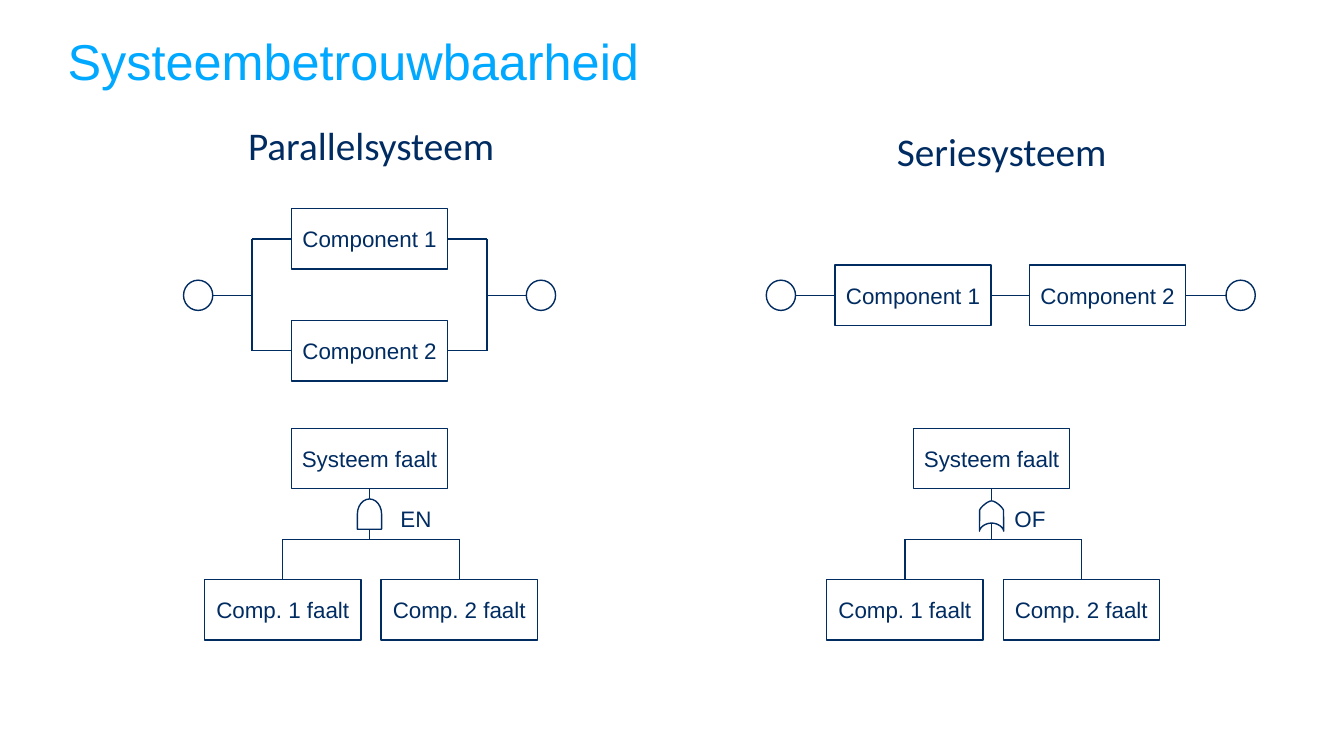
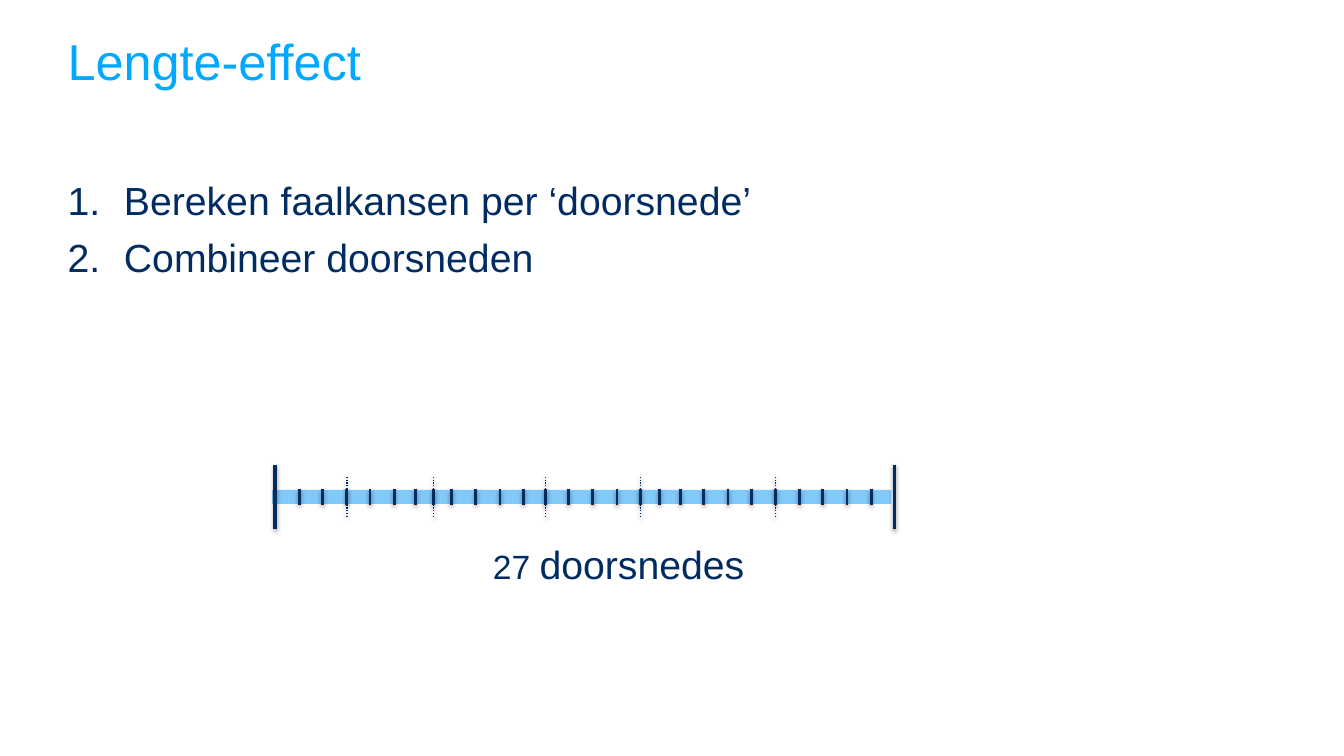
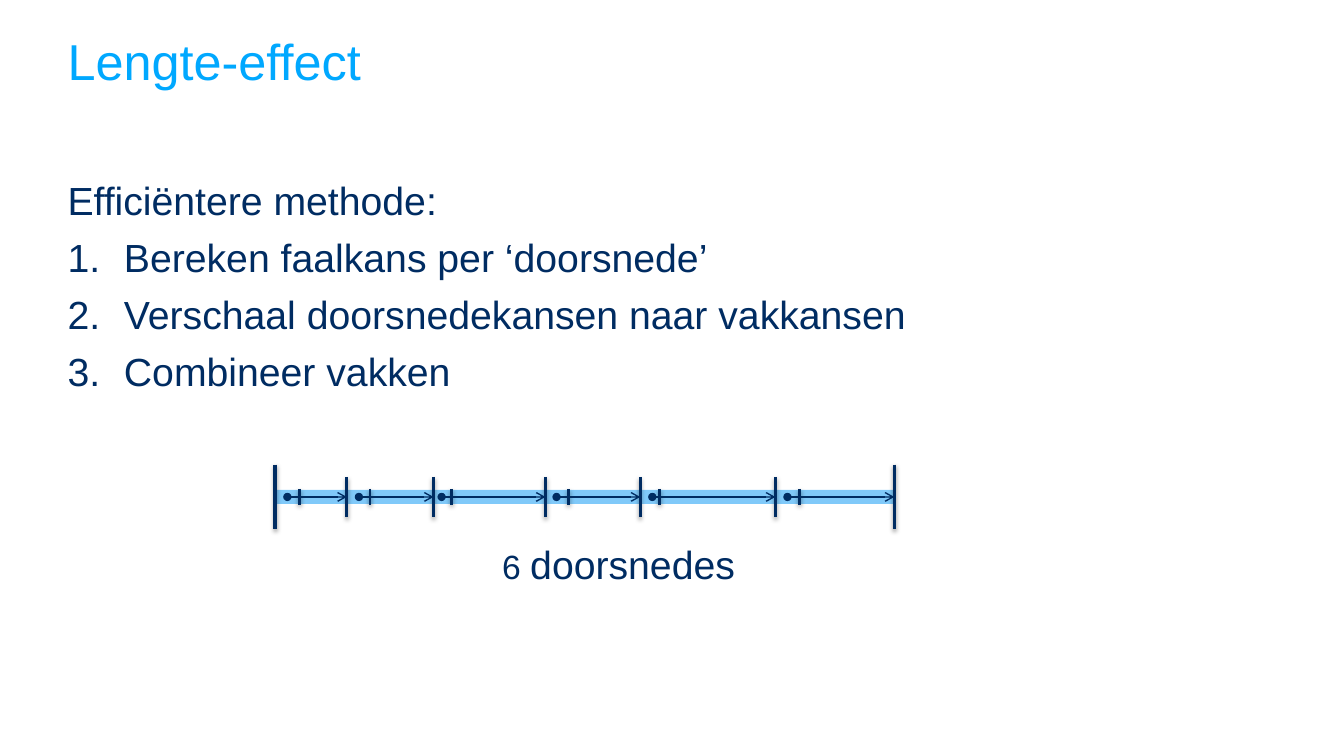
import dataclasses

import lxml.etree
import pptx
import pptx.dml.color
import pptx.enum.dml
import pptx.enum.shapes
import pptx.enum.text
import pptx.oxml.ns
import pptx.util

Inches = pptx.util.Inches
Pt = pptx.util.Pt
qn = pptx.oxml.ns.qn
Shape = pptx.enum.shapes.MSO_SHAPE
Align = pptx.enum.text.PP_ALIGN
Anchor = pptx.enum.text.MSO_ANCHOR
TOP, LEFT, BOTTOM, RIGHT = range(4)


@dataclasses.dataclass(frozen=True)
class Theme:
    title_color: str = "00A8FF"
    ink: str = "002C62"
    band: str = "0395F4"
    white: str = "FFFFFF"
    font: str = "Arial"
    heading_font: str = "Calibri"
    title_size: int = 36
    body_size: int = 28
    count_size: int = 24
    box_size: int = 16
    thin: float = 1
    tick: float = 2
    end: float = 2.5
    band_width: float = 10


@dataclasses.dataclass(frozen=True)
class Section:
    start: float
    dot: float
    ticks: tuple


THEME = Theme()
BOX_WIDTH, BOX_HEIGHT = 1.55, 0.6
CIRCLE_WIDTH, CIRCLE_HEIGHT = 0.29, 0.3
DIKE_START, DIKE_END, DIKE_Y = 2.73, 8.87, 4.93
SECTIONS = (
    Section(DIKE_START, 2.85, (2.97, 3.2)),
    Section(3.44, 3.56, (3.67, 3.91, 4.12)),
    Section(4.3, 4.38, (4.48, 4.72, 4.96, 5.19)),
    Section(5.41, 5.52, (5.64, 5.88, 6.12)),
    Section(6.35, 6.47, (6.54, 6.75, 6.98, 7.22, 7.45)),
    Section(7.69, 7.81, (7.93, 8.16, 8.4, 8.64)),
)
BOUNDARIES = [section.start for section in SECTIONS[1:]]


def rgb(value):
    return pptx.dml.color.RGBColor.from_string(value)


def style_font(font, size=None, color=THEME.ink, name=THEME.font):
    font.name = name
    font.color.rgb = rgb(color)
    if size:
        font.size = Pt(size)


def add_titled_slide(presentation, text):
    slide = presentation.slides.add_slide(presentation.slide_layouts[5])
    title = slide.shapes.title
    title.left, title.top = Inches(0.67), Inches(0.3)
    title.width, title.height = Inches(12), Inches(1.25)
    frame = title.text_frame
    frame.text = text
    remove_insets(frame)
    frame.vertical_anchor = Anchor.TOP
    frame.auto_size = pptx.enum.text.MSO_AUTO_SIZE.NONE
    paragraph = frame.paragraphs[0]
    paragraph.alignment = Align.LEFT
    style_font(paragraph.font, THEME.title_size, THEME.title_color)
    return slide


def remove_insets(frame):
    frame.margin_left = frame.margin_right = 0
    frame.margin_top = frame.margin_bottom = 0


def add_text_frame(slide, left, top, width, height):
    frame = slide.shapes.add_textbox(
        Inches(left), Inches(top), Inches(width), Inches(height)).text_frame
    frame.word_wrap = True
    return frame


def add_label(slide, text, left, top, width, height, size, name=THEME.font):
    frame = add_text_frame(slide, left, top, width, height)
    frame.vertical_anchor = Anchor.MIDDLE
    write_centred(frame, text, size, name)


def write_centred(frame, text, size, name=THEME.font):
    paragraph = frame.paragraphs[0]
    paragraph.text = text
    paragraph.alignment = Align.CENTER
    style_font(paragraph.font, size, name=name)


def add_body(slide, steps, intro=None):
    frame = add_text_frame(slide, 0.67, 1.75, 12, 4.2)
    remove_insets(frame)
    lines = ([intro] if intro else []) + steps
    for index, line in enumerate(lines):
        paragraph = frame.add_paragraph() if index else frame.paragraphs[0]
        paragraph.text = line
        if index:
            paragraph.space_before = Pt(7)
        if line != intro:
            properties = paragraph._p.get_or_add_pPr()
            properties.set("marL", str(Inches(0.56)))
            properties.set("indent", str(Inches(-0.56)))
            lxml.etree.SubElement(
                properties, qn("a:buAutoNum"), type="arabicPeriod")
        style_font(paragraph.font, THEME.body_size)


def style_outline(shape, fill=None):
    shape.shadow.inherit = False
    if fill:
        shape.fill.solid()
        shape.fill.fore_color.rgb = rgb(fill)
    else:
        shape.fill.background()
    shape.line.color.rgb = rgb(THEME.ink)
    shape.line.width = Pt(THEME.thin)


def add_outline(slide, kind, left, top, width, height, fill=None):
    shape = slide.shapes.add_shape(
        kind, Inches(left), Inches(top), Inches(width), Inches(height))
    style_outline(shape, fill)
    return shape


def add_box(slide, text, left, top):
    box = add_outline(
        slide, Shape.RECTANGLE, left, top, BOX_WIDTH, BOX_HEIGHT)
    box.text_frame.word_wrap = False
    box.text_frame.vertical_anchor = Anchor.MIDDLE
    write_centred(box.text_frame, text, THEME.box_size)
    return box


def add_terminal(slide, left, center_y):
    add_outline(slide, Shape.OVAL, left, center_y - CIRCLE_HEIGHT / 2,
                CIRCLE_WIDTH, CIRCLE_HEIGHT)


def add_line(slide, start, end, width=THEME.thin, color=THEME.ink,
             begin=None, finish=None, shadow=False):
    line = slide.shapes.add_connector(
        pptx.enum.shapes.MSO_CONNECTOR.STRAIGHT,
        *(Inches(value) for value in (*start, *end)))
    if begin:
        line.begin_connect(*begin)
    if finish:
        line.end_connect(*finish)
    line.line.color.rgb = rgb(color)
    line.line.width = Pt(width)
    effects = lxml.etree.SubElement(line._element.spPr, qn("a:effectLst"))
    if shadow:
        outer = lxml.etree.SubElement(
            effects, qn("a:outerShdw"), blurRad=str(Pt(3.1)),
            dist=str(Pt(1.6)), dir="5400000", rotWithShape="0")
        black = lxml.etree.SubElement(outer, qn("a:srgbClr"), val="000000")
        lxml.etree.SubElement(black, qn("a:alpha"), val="38000")
    return line


def add_parallel_system(slide):
    left, rails, middle = 2.89, (2.5, 4.83), 2.93
    tops = (2.07, 3.18)
    centers = [top + BOX_HEIGHT / 2 for top in tops]
    for number, (top, center) in enumerate(zip(tops, centers), 1):
        box = add_box(slide, f"Component {number}", left, top)
        sides = ((LEFT, left), (RIGHT, left + BOX_WIDTH))
        for rail, (side, edge) in zip(rails, sides):
            add_line(slide, (edge, center), (rail, center), begin=(box, side))
    for rail in rails:
        add_line(slide, (rail, centers[0]), (rail, centers[1]))
    add_line(slide, (2.11, middle), (rails[0], middle))
    add_line(slide, (rails[1], middle), (5.22, middle))
    add_terminal(slide, 1.82, middle)
    add_terminal(slide, 5.22, middle)


def add_series_system(slide):
    top = 2.63
    middle = top + BOX_HEIGHT / 2
    first = add_box(slide, "Component 1", 8.28, top)
    second = add_box(slide, "Component 2", 10.21, top)
    add_line(slide, (7.89, middle), (8.28, middle), finish=(first, LEFT))
    add_line(slide, (9.83, middle), (10.21, middle),
             begin=(first, RIGHT), finish=(second, LEFT))
    add_line(slide, (11.76, middle), (12.16, middle), begin=(second, RIGHT))
    add_terminal(slide, 7.6, middle)
    add_terminal(slide, 12.16, middle)


def add_fault_tree(slide, left, add_gate, label, label_left):
    center, bus_y, child_top = left + BOX_WIDTH / 2, 5.35, 5.75
    system = add_box(slide, "Systeem faalt", left, 4.25)
    child_centers = []
    for number, offset in enumerate((-0.86, 0.89), 1):
        child = add_box(
            slide, f"Comp. {number} faalt", left + offset, child_top)
        child_center = center + offset
        child_centers.append(child_center)
        add_line(slide, (child_center, bus_y), (child_center, child_top),
                 finish=(child, TOP))
    add_line(slide, *((x, bus_y) for x in child_centers))
    add_line(slide, (center, 4.85), (center, bus_y), begin=(system, BOTTOM))
    add_gate(slide, center)
    add_label(slide, label, label_left, 4.84, BOX_WIDTH, BOX_HEIGHT,
              THEME.box_size)


def add_and_gate(slide, center):
    gate = add_outline(slide, Shape.FLOWCHART_DELAY, center - 0.15, 4.98,
                       0.3, 0.24, THEME.white)
    gate.rotation = 270


def curve_points(*controls):
    steps = 12
    for step in range(1, steps + 1):
        t = step / steps
        weights = ((1 - t) ** 3, 3 * t * (1 - t) ** 2,
                   3 * t ** 2 * (1 - t), t ** 3)
        yield tuple(sum(weight * point[axis] for weight, point
                        in zip(weights, controls)) for axis in (0, 1))


def add_or_gate(slide, center):
    half, tip, shoulder, arch, foot = 0.12, 4.97, 5.07, 5.19, 5.27
    right_half = [
        *curve_points((0, arch), (0.07, arch), (half, 5.24), (half, foot)),
        *curve_points((half, shoulder), (half, 5.04), (0.04, tip), (0, tip)),
    ]
    left_half = [(-x, y) for x, y in reversed(right_half)]
    outline = [(Inches(center + x), Inches(y))
               for x, y in [(0, arch), *right_half, *left_half]]
    builder = slide.shapes.build_freeform(*outline[0])
    builder.add_line_segments(outline[1:], close=True)
    style_outline(builder.convert_to_shape(), THEME.white)


def add_band(slide, start, end):
    band = add_line(slide, (start, DIKE_Y), (end, DIKE_Y),
                    THEME.band_width, THEME.band)
    color = band.line._ln.find(".//" + qn("a:srgbClr"))
    lxml.etree.SubElement(color, qn("a:alpha"), val="50000")


def add_mark(slide, x, half_height, width):
    return add_line(slide, (x, DIKE_Y - half_height),
                    (x, DIKE_Y + half_height), width, shadow=True)


def add_ticks(slide, positions):
    for x in positions:
        add_mark(slide, x, 0.08, THEME.tick)


def add_dike(slide, band_start, band_end, boundary_width, dotted=False):
    add_band(slide, band_start, band_end)
    for x in (DIKE_START, DIKE_END):
        add_mark(slide, x, 0.32, THEME.end)
    for x in BOUNDARIES:
        mark = add_mark(slide, x, 0.2, boundary_width)
        if dotted:
            mark.line.dash_style = pptx.enum.dml.MSO_LINE.ROUND_DOT


def add_arrow(slide, start, end):
    arrow = add_line(slide, (start, DIKE_Y), (end, DIKE_Y))
    for tag, kind in (("a:headEnd", "oval"), ("a:tailEnd", "arrow")):
        lxml.etree.SubElement(arrow.line._ln, qn(tag), type=kind)


def add_caption(slide, count):
    paragraph = add_text_frame(slide, 2.8, 5.31, 6.67, 0.57).paragraphs[0]
    paragraph.alignment = Align.CENTER
    style_font(paragraph.font)
    for text, size in ((f"{count} ", THEME.count_size),
                       ("doorsnedes", THEME.body_size)):
        run = paragraph.add_run()
        run.text = text
        run.font.size = Pt(size)


def build_system_slide(presentation):
    slide = add_titled_slide(presentation, "Systeembetrouwbaarheid")
    add_label(slide, "Parallelsysteem", 2.09, 1.15, 3.18, 0.57,
              THEME.body_size, THEME.heading_font)
    add_label(slide, "Seriesysteem", 8.2, 1.21, 3.47, 0.57,
              THEME.body_size, THEME.heading_font)
    add_parallel_system(slide)
    add_series_system(slide)
    add_fault_tree(slide, 2.89, add_and_gate, "EN", 3.35)
    add_fault_tree(slide, 9.06, add_or_gate, "OF", 9.44)


def build_all_sections_slide(presentation):
    slide = add_titled_slide(presentation, "Lengte-effect")
    add_body(slide, ["Bereken faalkansen per ‘doorsnede’",
                     "Combineer doorsneden"])
    add_dike(slide, 2.7, 8.84, THEME.thin, dotted=True)
    for section in SECTIONS:
        add_ticks(slide, section.ticks)
    add_ticks(slide, BOUNDARIES)
    add_caption(slide, 27)


def build_efficient_slide(presentation):
    slide = add_titled_slide(presentation, "Lengte-effect")
    add_body(slide, ["Bereken faalkans per ‘doorsnede’",
                     "Verschaal doorsnedekansen naar vakkansen",
                     "Combineer vakken"], "Efficiëntere methode:")
    add_dike(slide, DIKE_START, DIKE_END, THEME.tick)
    for section, end in zip(SECTIONS, [*BOUNDARIES, DIKE_END]):
        add_ticks(slide, section.ticks[:1])
        add_arrow(slide, section.dot, end)
    add_caption(slide, len(SECTIONS))


def main():
    presentation = pptx.Presentation()
    presentation.slide_width = Inches(13.33)
    presentation.slide_height = Inches(7.5)
    build_system_slide(presentation)
    build_all_sections_slide(presentation)
    build_efficient_slide(presentation)
    presentation.save("out.pptx")


if __name__ == "__main__":
    main()
